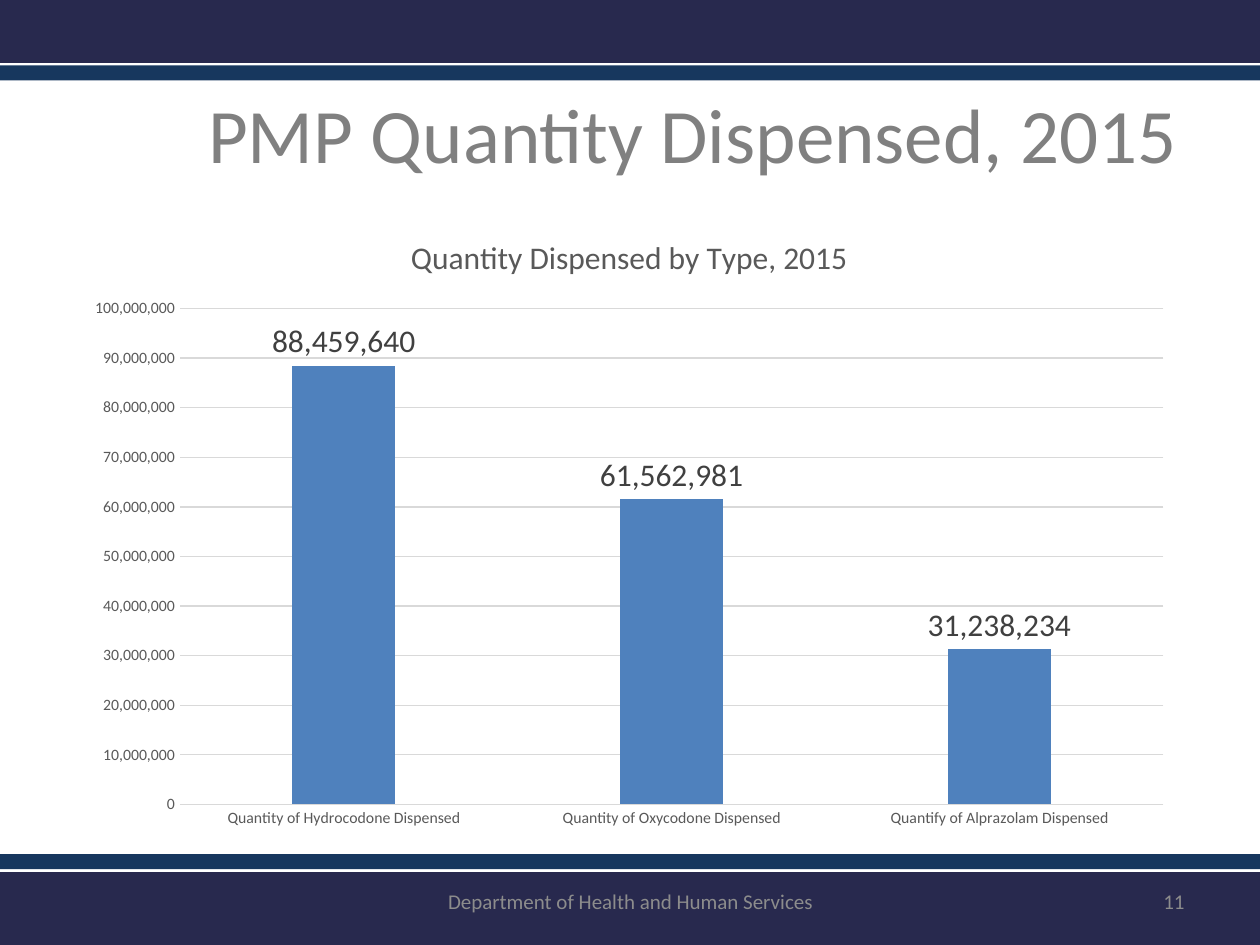
import pptx
import pptx.chart.data
import pptx.dml.color
import pptx.enum.chart
import pptx.enum.shapes
import pptx.enum.text
import pptx.util
from pptx.util import Cm, Pt

FONT = "Calibri"
COLORS = {
    "navy": "28294E",
    "blue": "17375E",
    "title": "808080",
    "footer": "8C8C8C",
    "column": "4F81BD",
    "grid": "D9D9D9",
    "axis": "595959",
    "label": "404040",
}


def color(name):
    return pptx.dml.color.RGBColor.from_string(COLORS[name])


def set_font(font, size, name):
    font.name = FONT
    font.size = Pt(size)
    font.bold = False
    font.color.rgb = color(name)


deck = pptx.Presentation()
deck.slide_width = Cm(25.4)
deck.slide_height = Cm(19.05)
page = deck.slides.add_slide(deck.slide_layouts[5])

# Header and footer bands: top, height, colour
for top, height, fill in [
    (0, 1.27, "navy"),
    (1.32, 0.3, "blue"),
    (17.58, 1.47, "navy"),
    (17.22, 0.3, "blue"),
]:
    band = page.shapes.add_shape(
        pptx.enum.shapes.MSO_SHAPE.RECTANGLE, 0, Cm(top), deck.slide_width, Cm(height)
    )
    band.shadow.inherit = False
    band.fill.solid()
    band.fill.fore_color.rgb = color(fill)
    band.line.fill.background()

# Title
title = page.shapes.title
title.left, title.top, title.width, title.height = Cm(2.54), Cm(1.52), Cm(22.86), Cm(2.29)
title.text_frame.text = "PMP Quantity Dispensed, 2015"
title.text_frame.vertical_anchor = pptx.enum.text.MSO_ANCHOR.MIDDLE
para = title.text_frame.paragraphs[0]
para.alignment = pptx.enum.text.PP_ALIGN.CENTER
set_font(para.font, 44, "title")

# Footer text and page number
for text, left, width, alignment in [
    ("Department of Health and Human Services", 8.69, 8.05, pptx.enum.text.PP_ALIGN.CENTER),
    ("11", 18.21, 5.92, pptx.enum.text.PP_ALIGN.RIGHT),
]:
    box = page.shapes.add_textbox(Cm(left), Cm(17.65), Cm(width), Cm(1.02))
    box.text_frame.word_wrap = True
    box.text_frame.vertical_anchor = pptx.enum.text.MSO_ANCHOR.MIDDLE
    para = box.text_frame.paragraphs[0]
    para.text = text
    para.alignment = alignment
    set_font(para.font, 12, "footer")

# Chart
data = pptx.chart.data.CategoryChartData(number_format="#,##0")
data.categories = [
    "Quantity of Hydrocodone Dispensed",
    "Quantity of Oxycodone Dispensed",
    "Quantify of Alprazolam Dispensed",
]
data.add_series("Series 1", [88459640, 61562981, 31238234])
chart = page.shapes.add_chart(
    pptx.enum.chart.XL_CHART_TYPE.COLUMN_CLUSTERED,
    Cm(1.47), Cm(4.24), Cm(22.43), Cm(12.7), data,
).chart
chart.has_legend = False
chart.font.name = FONT
chart.font.size = Pt(10)
chart.has_title = True
chart.chart_title.text_frame.text = "Quantity Dispensed by Type, 2015"
set_font(chart.chart_title.text_frame.paragraphs[0].font, 18, "axis")

# Columns and their labels
plot = chart.plots[0]
plot.vary_by_categories = False
plot.gap_width = 219
plot.overlap = -27
columns = plot.series[0]
columns.format.fill.solid()
columns.format.fill.fore_color.rgb = color("column")
labels = columns.data_labels
labels.show_value = True
labels.number_format = "#,##0"
labels.number_format_is_linked = False
labels.position = pptx.enum.chart.XL_LABEL_POSITION.OUTSIDE_END
set_font(labels.font, 18, "label")

# Axes
for axis in (chart.category_axis, chart.value_axis):
    axis.major_tick_mark = pptx.enum.chart.XL_TICK_MARK.NONE
    axis.minor_tick_mark = pptx.enum.chart.XL_TICK_MARK.NONE
    set_font(axis.tick_labels.font, 9, "axis")
chart.value_axis.format.line.fill.background()
chart.value_axis.minimum_scale = 0
chart.value_axis.maximum_scale = 100000000
chart.value_axis.major_unit = 10000000
chart.value_axis.tick_labels.number_format = "#,##0"
chart.value_axis.tick_labels.number_format_is_linked = False
for line in (chart.category_axis.format.line, chart.value_axis.major_gridlines.format.line):
    line.color.rgb = color("grid")
    line.width = Pt(0.75)

deck.save("out.pptx")
